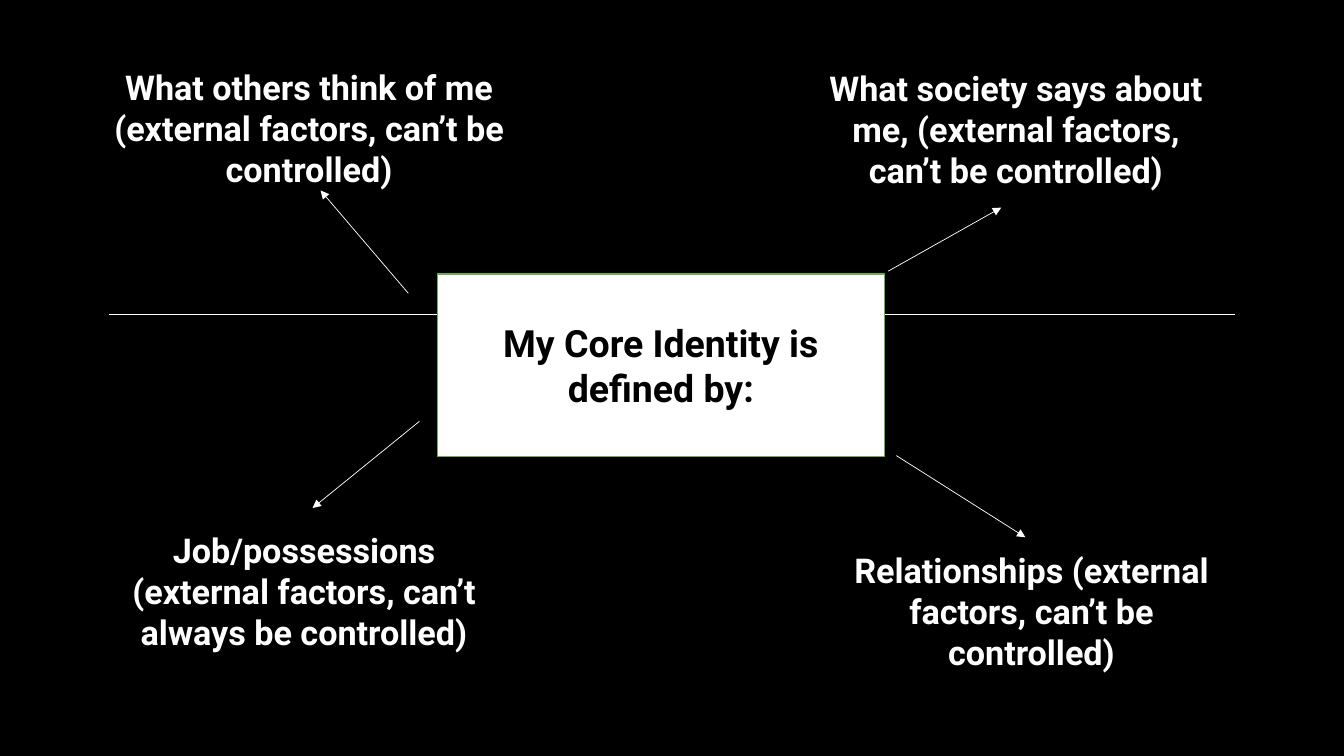
from dataclasses import dataclass

import lxml.etree
import pptx
import pptx.dml.color
import pptx.enum.shapes
import pptx.enum.text
import pptx.oxml.ns
import pptx.util

Inches = pptx.util.Inches
Pt = pptx.util.Pt
qn = pptx.oxml.ns.qn

COLORS = {"black": "000000", "white": "FFFFFF", "green": "70AD47"}
FONT = "Roboto"
FACTOR_HEIGHT = 1.33


@dataclass
class Factor:
    text: str
    left: float
    top: float
    width: float
    arrow_from: tuple[float, float]
    arrow_to: tuple[float, float]


FACTORS = [
    Factor("What others think of me (external factors, can’t be controlled)",
           0.85, 0.61, 4.43, (4.05, 2.91), (3.18, 1.89)),
    Factor("What society says about me, (external factors, can’t be controlled)",
           7.98, 0.62, 4.19, (8.81, 2.69), (9.93, 2.06)),
    Factor("Job/possessions (external factors, can’t always be controlled)",
           1.08, 5.2, 3.87, (4.16, 4.18), (3.1, 5.04)),
    Factor("Relationships (external factors, can’t be controlled)",
           8.2, 5.4, 4.06, (8.89, 4.52), (10.17, 5.33)),
]


def rgb(name: str) -> pptx.dml.color.RGBColor:
    return pptx.dml.color.RGBColor.from_string(COLORS[name])


def write_bold(shape, text: str, size: float, color: str) -> None:
    """Put one centred bold paragraph in the shape."""
    tf = shape.text_frame
    tf.word_wrap = True
    p = tf.paragraphs[0]
    p.alignment = pptx.enum.text.PP_ALIGN.CENTER
    r = p.add_run()
    r.text = text
    r.font.name = FONT
    r.font.size = Pt(size)
    r.font.bold = True
    r.font.color.rgb = rgb(color)


def add_line(s, start: tuple[float, float], end: tuple[float, float],
             arrow: bool = False) -> None:
    line = s.shapes.add_connector(
        pptx.enum.shapes.MSO_CONNECTOR.STRAIGHT,
        *(Inches(v) for v in (*start, *end)))
    line.line.color.rgb = rgb("white")
    line.line.width = Pt(0.5)
    if arrow:
        ln = line.line._get_or_add_ln()
        lxml.etree.SubElement(ln, qn("a:tailEnd"), type="triangle")
    lxml.etree.SubElement(line._element.spPr, qn("a:effectLst"))


def add_factor_text(s, factor: Factor) -> None:
    box = s.shapes.add_textbox(Inches(factor.left), Inches(factor.top),
                               Inches(factor.width), Inches(FACTOR_HEIGHT))
    write_bold(box, factor.text, 24.4, "white")


def add_core_box(s) -> None:
    sp = s.shapes.add_shape(
        pptx.enum.shapes.MSO_SHAPE.FLOWCHART_PROCESS,
        Inches(4.34), Inches(2.72), Inches(4.43), Inches(1.81))
    sp.shadow.inherit = False
    sp.fill.solid()
    sp.fill.fore_color.rgb = rgb("white")
    sp.line.color.rgb = rgb("green")
    sp.line.width = Pt(1)
    sp.text_frame.vertical_anchor = pptx.enum.text.MSO_ANCHOR.MIDDLE
    write_bold(sp, "My Core Identity is defined by:", 26.8, "black")


def main() -> None:
    prs = pptx.Presentation()
    prs.slide_width = Inches(13.33)
    prs.slide_height = Inches(7.5)
    s = prs.slides.add_slide(prs.slide_layouts[6])
    s.background.fill.solid()
    s.background.fill.fore_color.rgb = rgb("black")

    for factor in FACTORS:
        add_factor_text(s, factor)
    add_line(s, (1.08, 3.12), (12.25, 3.12))
    add_core_box(s)
    for factor in FACTORS:
        add_line(s, factor.arrow_from, factor.arrow_to, arrow=True)

    prs.save("out.pptx")


if __name__ == "__main__":
    main()
